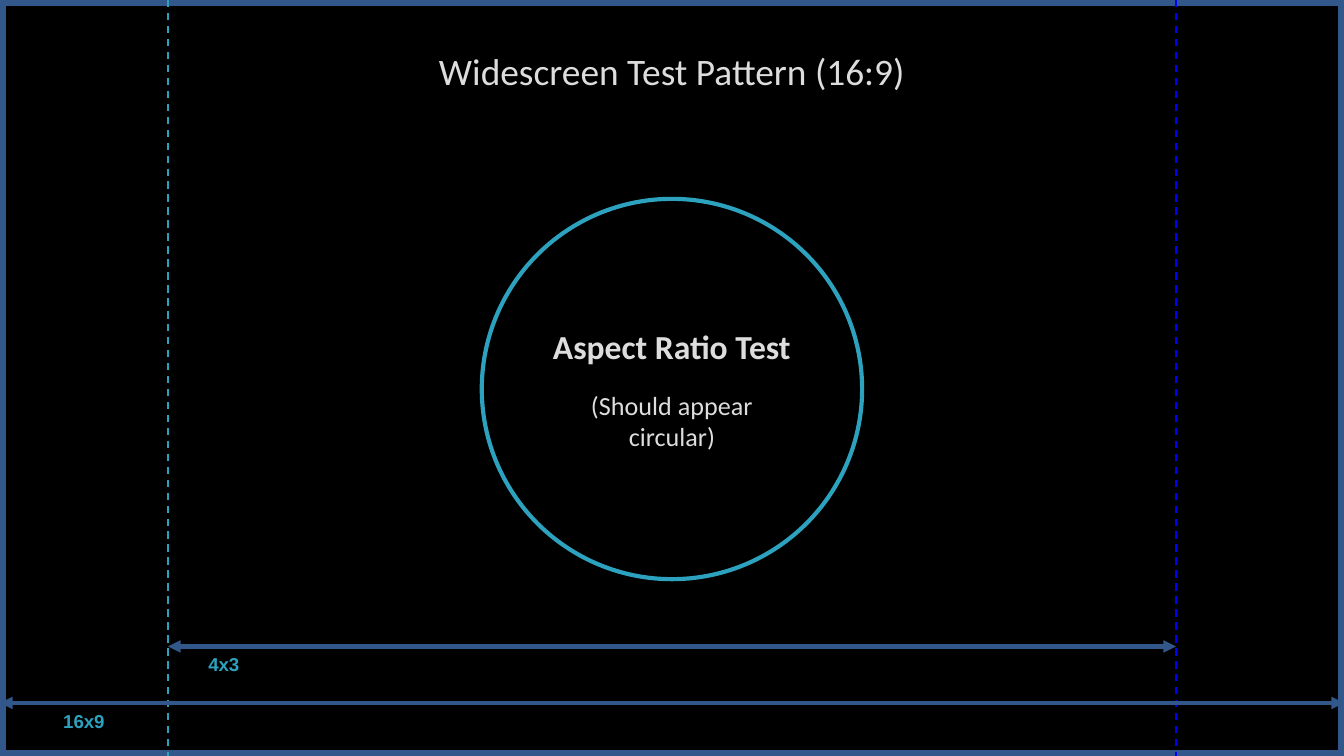
from lxml.etree import SubElement
from pptx import Presentation
from pptx.dml.color import RGBColor
from pptx.enum.dml import MSO_LINE
from pptx.enum.shapes import MSO_CONNECTOR, MSO_SHAPE
from pptx.enum.text import MSO_ANCHOR, PP_ALIGN
from pptx.oxml.ns import qn
from pptx.util import Inches, Pt

WIDTH = 10
HEIGHT = WIDTH * 9 / 16
LEFT, RIGHT = 1.25, 8.75
COLORS = {
    "black": "000000",
    "frame": "32578B",
    "teal": "2DA2BF",
    "blue": "0000FF",
    "text": "DDDDDD",
}


def rgb(name):
    return RGBColor.from_string(COLORS[name])


def add_run(para, text, size, color, font="Calibri", bold=False):
    run = para.add_run()
    run.text = text
    run.font.name = font
    run.font.size = Pt(size)
    run.font.bold = bold
    run.font.color.rgb = rgb(color)


def add_outline(slide, kind, box, color, width):
    shape = slide.shapes.add_shape(kind, *map(Inches, box))
    shape.shadow.inherit = False
    shape.fill.background()
    shape.line.color.rgb = rgb(color)
    shape.line.width = Pt(width)
    return shape


def add_line(slide, start, end, color, width):
    line = slide.shapes.add_connector(
        MSO_CONNECTOR.STRAIGHT, *map(Inches, start + end))
    line.line.color.rgb = rgb(color)
    line.line.width = Pt(width)
    SubElement(line._element.spPr, qn("a:effectLst"))
    return line


def add_guide(slide, x, color):
    guide = add_line(slide, (x, 0), (x, HEIGHT), color, 1)
    guide.line.dash_style = MSO_LINE.DASH


def add_span(slide, left, right, y):
    span = add_line(slide, (left, y), (right, y), "frame", 2.25)
    for end in ("a:headEnd", "a:tailEnd"):
        SubElement(span.line._get_or_add_ln(), qn(end), type="triangle")


def add_text(slide, box):
    frame = slide.shapes.add_textbox(*map(Inches, box)).text_frame
    frame.word_wrap = True
    return frame


def add_label(slide, x, y, text):
    frame = add_text(slide, (x, y, 0.58, 0.27))
    frame.margin_left = frame.margin_right = Inches(0.05)
    frame.margin_top = frame.margin_bottom = Inches(0.05)
    add_run(frame.paragraphs[0], text, 10, "teal", "Arial", True)


def add_title(slide, text):
    para = add_text(slide, (0.75, 0.31, 8.5, 0.92)).paragraphs[0]
    para.alignment = PP_ALIGN.CENTER
    add_run(para, text, 20, "text")


def add_circle(slide, top, size, head, note):
    box = ((WIDTH - size) / 2, top, size, size)
    circle = add_outline(slide, MSO_SHAPE.OVAL, box, "teal", 2.25)
    frame = circle.text_frame
    frame.word_wrap = True
    frame.vertical_anchor = MSO_ANCHOR.MIDDLE
    first, second = frame.paragraphs[0], frame.add_paragraph()
    first.alignment = second.alignment = PP_ALIGN.CENTER
    second.space_before = Pt(12)
    add_run(first, head, 18, "text", bold=True)
    add_run(second, note, 14, "text")


def main():
    deck = Presentation()
    deck.slide_width, deck.slide_height = Inches(WIDTH), Inches(HEIGHT)
    slide = deck.slides.add_slide(deck.slide_layouts[6])
    slide.background.fill.solid()
    slide.background.fill.fore_color.rgb = rgb("black")

    add_outline(slide, MSO_SHAPE.RECTANGLE, (0, 0, WIDTH, HEIGHT), "frame", 6)
    add_title(slide, "Widescreen Test Pattern (16:9)")
    add_guide(slide, LEFT, "teal")
    add_guide(slide, RIGHT, "blue")
    add_circle(slide, 1.48, 2.83,
               "Aspect Ratio Test", "(Should appear circular)")
    for left, right, y, x, text in (
        (0, WIDTH, 5.23, 0.42, "16x9"),
        (LEFT, RIGHT, 4.81, 1.5, "4x3"),
    ):
        add_span(slide, left, right, y)
        add_label(slide, x, y, text)

    deck.save("out.pptx")


if __name__ == "__main__":
    main()
